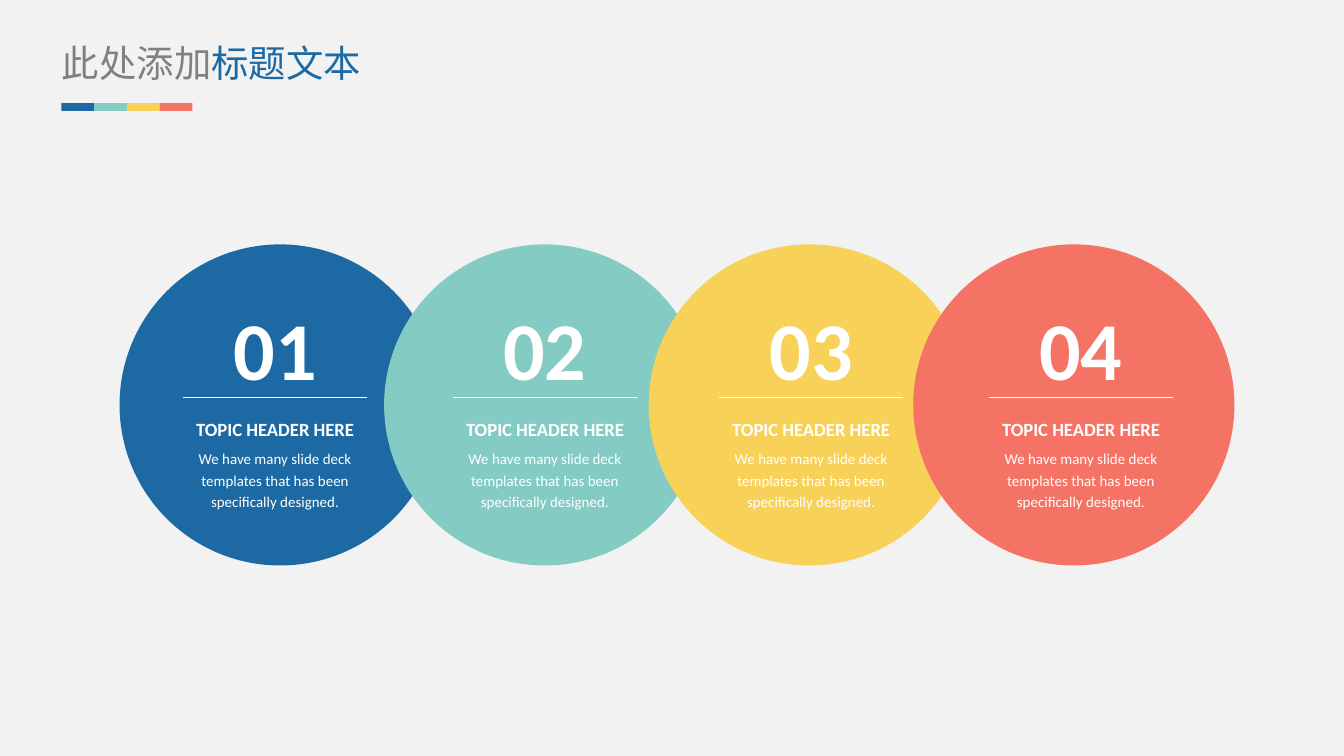
from lxml.etree import SubElement
from pptx import Presentation
from pptx.dml.color import RGBColor
from pptx.enum.shapes import MSO_CONNECTOR, MSO_SHAPE
from pptx.enum.text import MSO_AUTO_SIZE, PP_ALIGN
from pptx.oxml.ns import qn
from pptx.util import Cm, Pt

BLUE, GREY, WHITE = "1D69A3", "808080", "FFFFFF"
PALETTE = [BLUE, "84CBC3", "F8D158", "F57365"]
HEADER = "TOPIC HEADER HERE"
BODY = "We have many slide deck templates that has been specifically designed."


def color(hex_string):
    return RGBColor.from_string(hex_string)


class SlideBuilder:
    latin_font = "Calibri"
    title_font = "Noto Sans CJK SC"

    def __init__(self, slide):
        self.slide = slide

    def background(self, fill):
        self.slide.background.fill.solid()
        self.slide.background.fill.fore_color.rgb = color(fill)

    def shape(self, kind, left, top, width, height, fill, parent=None):
        shapes = (parent or self.slide).shapes
        shape = shapes.add_shape(kind, Cm(left), Cm(top), Cm(width), Cm(height))
        shape.shadow.inherit = False
        shape.fill.solid()
        shape.fill.fore_color.rgb = color(fill)
        shape.line.fill.background()

    def line(self, left, right, y):
        connector = self.slide.shapes.add_connector(
            MSO_CONNECTOR.STRAIGHT, Cm(left), Cm(y), Cm(right), Cm(y))
        connector.line.color.rgb = color(WHITE)
        connector.line.width = Pt(0.5)
        SubElement(connector._element.spPr, qn("a:effectLst"))

    def text_frame(self, left, top, width, height):
        box = self.slide.shapes.add_textbox(Cm(left), Cm(top), Cm(width), Cm(height))
        frame = box.text_frame
        frame.word_wrap = True
        frame.auto_size = MSO_AUTO_SIZE.SHAPE_TO_FIT_TEXT
        frame.margin_left = frame.margin_right = 0
        frame.margin_top = frame.margin_bottom = 0
        return frame

    def centred_text(self, left, top, width, height, lines):
        """Each line is (text, size, bold)."""
        frame = self.text_frame(left, top, width, height)
        frame.text = "\n".join(text for text, _, _ in lines)
        for paragraph, (_, size, bold) in zip(frame.paragraphs, lines):
            paragraph.alignment = PP_ALIGN.CENTER
            paragraph.line_spacing = 1.2
            paragraph.space_before = Pt(3)
            font = paragraph.runs[0].font
            font.name, font.size, font.bold = self.latin_font, Pt(size), bold
            font.color.rgb = color(WHITE)

    def title(self, left, top, width, height, parts):
        """Each part is (text, colour)."""
        paragraph = self.text_frame(left, top, width, height).paragraphs[0]
        for text, text_color in parts:
            run = paragraph.add_run()
            run.text = text
            run.font.size = Pt(20)
            run.font.color.rgb = color(text_color)
            run.font.name = self.title_font
            east_asian = SubElement(run.font._element, qn("a:ea"))
            east_asian.set("typeface", self.title_font)


def main():
    presentation = Presentation()
    presentation.slide_width, presentation.slide_height = Cm(25.4), Cm(14.29)
    slide = presentation.slides.add_slide(presentation.slide_layouts[6])
    builder = SlideBuilder(slide)
    builder.background("F2F2F2")

    # Overlapping circles
    for index, fill in enumerate(PALETTE):
        builder.shape(MSO_SHAPE.OVAL, 2.26 + 5 * index, 4.62, 6.07, 6.07, fill)

    # Topic, number and rule, centred on one axis per circle
    for number, center in enumerate([5.2, 10.3, 15.33, 20.43], start=1):
        builder.centred_text(center - 1.89, 7.82, 3.78, 1.85,
                             [(HEADER, 10, True), (BODY, 8, False)])
        builder.centred_text(center - 1.3, 5.26, 2.6, 2.26,
                             [(f"{number:02d}", 44, True)])
        builder.line(center - 1.74, center + 1.74, 7.51)

    # Title with its colour strip
    builder.title(1.17, 0.76, 7.72, 0.86, [("此处添加", GREY), ("标题文本", BLUE)])
    strip = slide.shapes.add_group_shape()
    for index, fill in enumerate(PALETTE):
        builder.shape(MSO_SHAPE.RECTANGLE, 1.16 + 0.62 * index, 1.95, 0.62, 0.15,
                      fill, strip)

    presentation.save("out.pptx")


if __name__ == "__main__":
    main()
